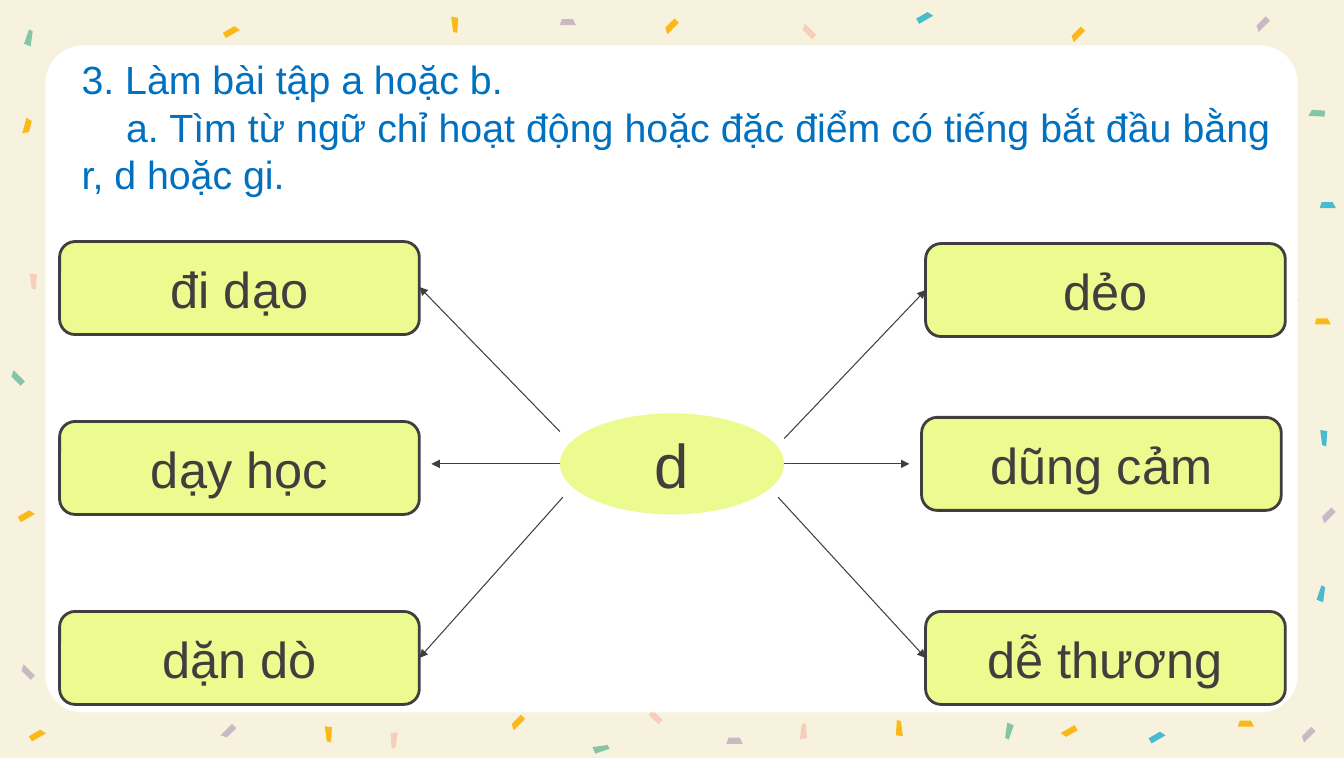
from lxml.etree import SubElement
from pptx import Presentation
from pptx.dml.color import RGBColor
from pptx.enum.shapes import MSO_CONNECTOR, MSO_SHAPE
from pptx.enum.text import MSO_ANCHOR, PP_ALIGN
from pptx.oxml.ns import qn
from pptx.util import Pt

SCALE = 9144  # EMU per px, 100 px to the inch
INK, LIME, BLUE = "413E3E", "ECFB8F", "0070C0"
AMBER, PINK, GREEN, MAUVE, TEAL = "FAB919", "F8CEBB", "85C5A7", "CAB8C5", "4ABACD"


def px(*lengths):
    return [length * SCALE for length in lengths]


def paint(shape, colour):
    shape.shadow.inherit = False
    shape.fill.solid()
    shape.fill.fore_color.rgb = RGBColor.from_string(colour)
    shape.line.fill.background()


deck = Presentation()
deck.slide_width, deck.slide_height = px(1330, 750)
page = deck.slides.add_slide(deck.slide_layouts[6])
page.background.fill.solid()
page.background.fill.fore_color.rgb = RGBColor.from_string("F7F2DD")

# Confetti: three outlines, two of them also mirrored
outlines = {
    "trapeze": [(2, 0), (13, 0), (16, 6), (0, 6)],
    "bevel": [(16, 6), (3, 6), (0, 0), (16, 0)],
    "chip": [(15, 7), (0, 6), (1, 2), (16, 0)],
}
for name in ("bevel", "chip"):
    outlines[name + " mirrored"] = [(16 - x, y) for x, y in outlines[name]]

# Outline, rotation, then left, top and colour of each piece
confetti = [
    ("trapeze", 0, [(554, 19, MAUVE), (1306, 200, TEAL), (1301, 315, AMBER),
                    (719, 730, MAUVE), (1225, 713, AMBER)]),
    ("trapeze", 105, [(19, 122, AMBER)]),
    ("trapeze", 180, [(1050, 698, MAUVE)]),
    ("bevel", 45, [(46, 419, MAUVE), (792, 28, PINK), (9, 371, GREEN),
                   (19, 662, MAUVE), (640, 706, PINK)]),
    ("bevel", 150, [(221, 28, AMBER), (907, 14, TEAL), (18, 507, AMBER),
                    (29, 724, AMBER), (1137, 726, TEAL)]),
    ("bevel", 315, [(218, 721, MAUVE)]),
    ("bevel", 330, [(1050, 721, AMBER)]),
    ("bevel mirrored", 135, [(656, 23, AMBER), (1058, 31, AMBER), (1241, 21, MAUVE),
                             (1306, 507, MAUVE), (504, 712, AMBER), (1286, 724, MAUVE)]),
    ("bevel mirrored", 183.4, [(1295, 109, GREEN)]),
    ("chip", 90, [(882, 717, AMBER)]),
    ("chip", 105, [(21, 34, GREEN), (1300, 584, TEAL)]),
    ("chip", 270, [(442, 21, AMBER), (25, 275, PINK), (317, 723, AMBER),
                   (1302, 430, TEAL)]),
    ("chip", 285, [(990, 720, GREEN)]),
    ("chip mirrored", 90, [(382, 729, PINK)]),
    ("chip mirrored", 270, [(787, 720, PINK)]),
    ("chip mirrored", 345, [(587, 737, GREEN)]),
]
for name, angle, pieces in confetti:
    for left, top, colour in pieces:
        first, *others = outlines[name]
        builder = page.shapes.build_freeform(*first, scale=SCALE)
        builder.add_line_segments(others)
        piece = builder.convert_to_shape(*px(left, top))
        piece.rotation = angle
        paint(piece, colour)
star = page.shapes.add_shape(MSO_SHAPE.STAR_5_POINT, *px(1258, 286, 28, 27))
paint(star, PINK)

# White panel
panel = page.shapes.add_shape(MSO_SHAPE.ROUNDED_RECTANGLE, *px(45, 45, 1239, 660))
panel.adjustments[0] = 0.056
paint(panel, "FFFFFF")

# Exercise text
task = page.shapes.add_textbox(*px(71, 50, 1196, 151))
task.text_frame.word_wrap = True
task.text_frame.text = (
    "3. Làm bài tập a hoặc b.\n"
    "a. Tìm từ ngữ chỉ hoạt động hoặc đặc điểm có tiếng bắt đầu bằng r, d hoặc gi."
)
for para in task.text_frame.paragraphs:
    para.alignment = PP_ALIGN.JUSTIFY
    for span in para.runs:
        span.font.name, span.font.size = "Arial", Pt(28)
        span.font.color.rgb = RGBColor.from_string(BLUE)
task.text_frame.paragraphs[1]._p.get_or_add_pPr().set("indent", str(44 * SCALE))

# Arrows from the hub to the words
arrows = [
    (554, 427, 415, 284), (554, 459, 427, 459), (557, 492, 415, 651),
    (776, 434, 916, 287), (776, 459, 900, 459), (770, 492, 916, 651),
]
for ends in arrows:
    arrow = page.shapes.add_connector(MSO_CONNECTOR.STRAIGHT, *px(*ends))
    arrow.line.width = Pt(0.75)
    arrow.line.color.rgb = RGBColor.from_string(INK)
    SubElement(arrow.line._get_or_add_ln(), qn("a:tailEnd"), type="triangle")
    SubElement(arrow._element.spPr, qn("a:effectLst"))

# Word cards and the hub
card, hub = MSO_SHAPE.ROUNDED_RECTANGLE, MSO_SHAPE.OVAL
labels = [
    ("đi dạo", card, 59, 239, 356, 92, 36),
    ("dạy học", card, 59, 417, 356, 92, 36),
    ("dặn dò", card, 59, 605, 356, 92, 36),
    ("dẻo", card, 916, 241, 356, 92, 36),
    ("dũng cảm", card, 912, 413, 356, 92, 36),
    ("dễ thương", card, 916, 605, 356, 92, 36),
    ("d", hub, 554, 409, 222, 100, 44),
]
for word, kind, left, top, width, height, size in labels:
    box = page.shapes.add_shape(kind, *px(left, top, width, height))
    paint(box, LIME)
    if kind == card:
        box.line.color.rgb = RGBColor.from_string(INK)
        box.line.width = Pt(2)
    box.text_frame.text = word
    box.text_frame.vertical_anchor = MSO_ANCHOR.MIDDLE
    para = box.text_frame.paragraphs[0]
    para.alignment = PP_ALIGN.CENTER
    font = para.runs[0].font
    font.name, font.size = "Arial", Pt(size)
    font.color.rgb = RGBColor.from_string(INK)

deck.save("out.pptx")
